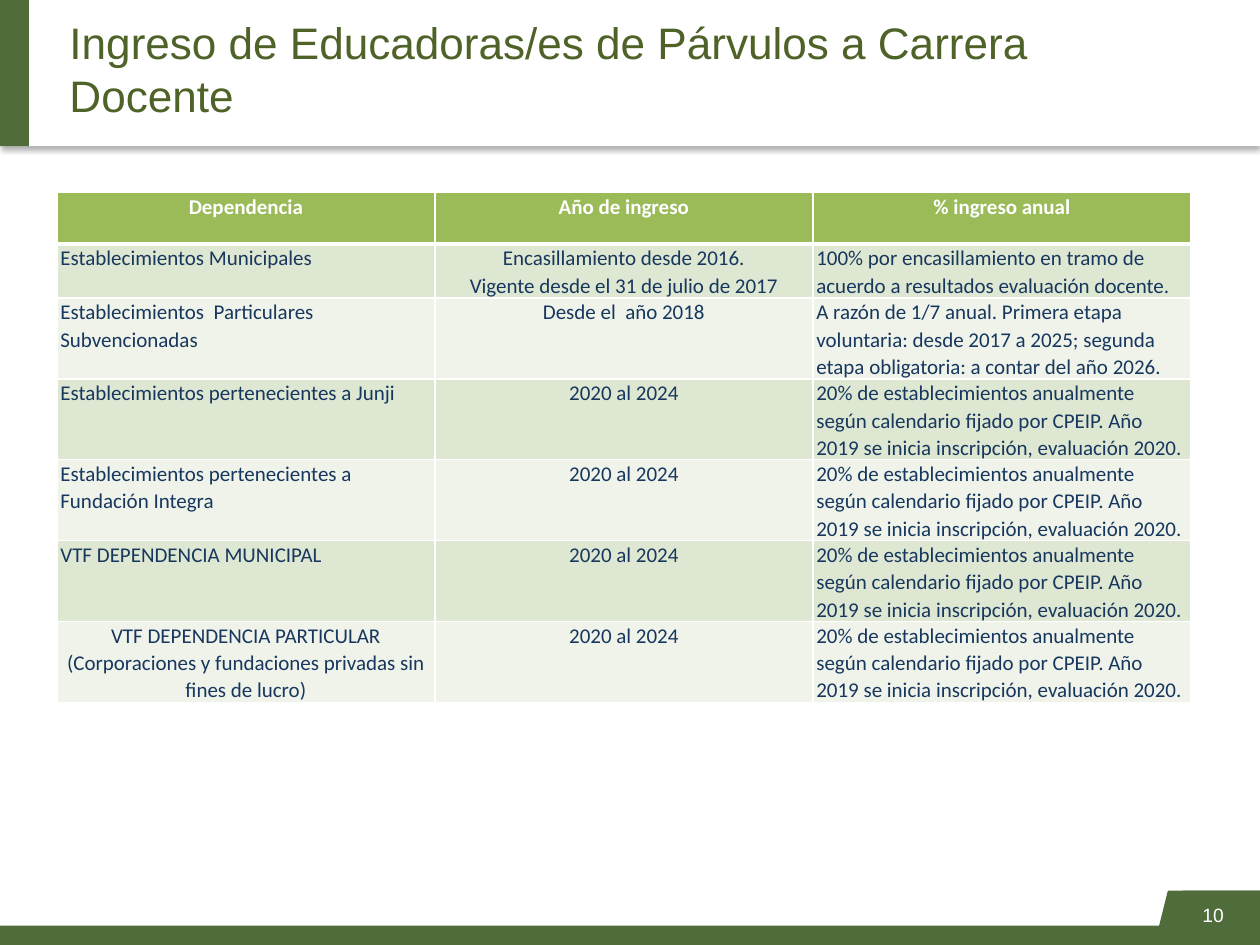
import pptx
import pptx.util
import pptx.dml.color
import pptx.enum.shapes
import pptx.enum.text
import pptx.oxml
import pptx.oxml.ns

Pt = pptx.util.Pt
SHAPE = pptx.enum.shapes.MSO_SHAPE
ALIGN = pptx.enum.text.PP_ALIGN
MIDDLE = pptx.enum.text.MSO_ANCHOR.MIDDLE

# Content
HEADING = "Ingreso de Educadoras/es de Párvulos a Carrera Docente"
PAGE_NUMBER = "10"
COLUMNS = ["Dependencia", "Año de ingreso", "% ingreso anual"]
PERIOD = "2020 al 2024"
CALENDAR = ("20% de establecimientos anualmente según calendario fijado por CPEIP. "
            "Año 2019 se inicia inscripción, evaluación 2020.")
ENTRIES = [
    ("Establecimientos Municipales",
     "Encasillamiento desde 2016.\nVigente desde el 31 de julio de 2017",
     "100% por encasillamiento en tramo de acuerdo a resultados evaluación docente."),
    ("Establecimientos  Particulares Subvencionadas",
     "Desde el  año 2018",
     "A razón de 1/7 anual. Primera etapa voluntaria: desde 2017 a 2025; "
     "segunda etapa obligatoria: a contar del año 2026."),
    ("Establecimientos pertenecientes a Junji", PERIOD, CALENDAR),
    ("Establecimientos pertenecientes a Fundación Integra", PERIOD, CALENDAR),
    ("VTF DEPENDENCIA MUNICIPAL", PERIOD, CALENDAR),
    ("VTF DEPENDENCIA PARTICULAR (Corporaciones y fundaciones privadas sin fines de lucro)",
     PERIOD, CALENDAR),
]

# Format values
GREEN, WHITE = "4F6C3A", "FFFFFF"
BANDS = ["DEE7D1", "EFF3EA"]
HEADING_FONT = {"name": "Arial", "size": Pt(25.2), "bold": False}
NUMBER_FONT = {"name": "Arial", "size": Pt(11)}
HEADER_FONT = {"name": "Calibri", "size": Pt(12), "bold": True}
ENTRY_FONT = {**HEADER_FONT, "bold": False}
CELL_FRAME = {"margin_left": Pt(2), "margin_right": Pt(2), "margin_top": 0, "margin_bottom": 0}

# Bands of the page: preset, left, top, width, height, colour
HEADER_BAND = (SHAPE.RECTANGLE, 0, 0, 720, 83.5, WHITE)
GREEN_BANDS = [
    (SHAPE.RECTANGLE, 0, -3, 16.5, 86.5, GREEN),
    (SHAPE.RECTANGLE, 0, 529, 720, 11.5, GREEN),
    (SHAPE.PARALLELOGRAM, 659.5, 509, 60.5, 31.5, GREEN),
    (SHAPE.RECTANGLE, 676, 509, 44, 31.5, GREEN),
]


def rgb(hex_colour):
    return pptx.dml.color.RGBColor.from_string(hex_colour)


def apply(target, values):
    for attribute, value in values.items():
        setattr(target, attribute, value)


def style_text(paragraph, font_values, colour, align):
    paragraph.alignment = align
    apply(paragraph.font, font_values)
    paragraph.font.color.rgb = rgb(colour)


def add_band(shapes, preset, left, top, width, height, colour):
    band = shapes.add_shape(preset, Pt(left), Pt(top), Pt(width), Pt(height))
    band.shadow.inherit = False
    band.fill.solid()
    band.fill.fore_color.rgb = rgb(colour)
    band.line.fill.background()
    return band


def add_shadow(band):
    effects = band.element.spPr.find(pptx.oxml.ns.qn("a:effectLst"))
    effects.append(pptx.oxml.parse_xml(
        f'<a:outerShdw {pptx.oxml.ns.nsdecls("a")} blurRad="{Pt(3.1)}" dist="{Pt(1.8)}" '
        'dir="5400000" algn="t" rotWithShape="0"><a:srgbClr val="000000">'
        '<a:alpha val="35000"/></a:srgbClr></a:outerShdw>'))


def add_borders(cell, widths):
    properties = cell._tc.get_or_add_tcPr()
    for side in "LRTB":
        properties.append(pptx.oxml.parse_xml(
            f'<a:ln{side} {pptx.oxml.ns.nsdecls("a")} w="{Pt(widths.get(side, 1))}">'
            f'<a:solidFill><a:srgbClr val="{WHITE}"/></a:solidFill></a:ln{side}>'))


def fill_cell(cell, text, fill, font_values, colour, align, widths):
    apply(cell, CELL_FRAME)
    add_borders(cell, widths)
    cell.fill.solid()
    cell.fill.fore_color.rgb = rgb(fill)
    cell.text_frame.text = text
    for paragraph in cell.text_frame.paragraphs:
        paragraph.line_spacing = 1.07
        style_text(paragraph, font_values, colour, align)


def main():
    deck = pptx.Presentation()
    apply(deck, {"slide_width": Pt(720), "slide_height": Pt(540)})
    slide = deck.slides.add_slide(deck.slide_layouts[5])
    shapes = slide.shapes

    # Header and footer bands
    add_shadow(add_band(shapes, *HEADER_BAND))
    for band in GREEN_BANDS:
        add_band(shapes, *band)

    # Title, brought in front of the bands
    title = shapes.title
    title.element.getparent().append(title.element)
    apply(title, {"left": Pt(32.5), "top": Pt(11.5), "width": Pt(598), "height": Pt(55)})
    title.text_frame.text = HEADING
    apply(title.text_frame, {"vertical_anchor": MIDDLE, "word_wrap": True,
                             "auto_size": pptx.enum.text.MSO_AUTO_SIZE.NONE})
    style_text(title.text_frame.paragraphs[0], HEADING_FONT, "4F6228", ALIGN.LEFT)

    # Page number
    number = shapes.add_textbox(Pt(646), Pt(508.5), Pt(60.5), Pt(29)).text_frame
    number.text = PAGE_NUMBER
    apply(number, {"vertical_anchor": MIDDLE, "word_wrap": True})
    style_text(number.paragraphs[0], NUMBER_FONT, WHITE, ALIGN.RIGHT)

    # Table of entry years
    row_height = 29.5
    frame = shapes.add_table(len(ENTRIES) + 1, len(COLUMNS), Pt(32.5), Pt(110),
                             Pt(648), Pt(row_height * (len(ENTRIES) + 1)))
    table = frame.table
    for column, text in enumerate(COLUMNS):
        fill_cell(table.cell(0, column), text, "9BBB59", HEADER_FONT, WHITE,
                  ALIGN.CENTER, {"B": 3})
    for row, entry in enumerate(ENTRIES, start=1):
        for column, text in enumerate(entry):
            centred = column == 1 or (column == 0 and row == len(ENTRIES))
            fill_cell(table.cell(row, column), text, BANDS[(row - 1) % 2], ENTRY_FONT,
                      "17375E", ALIGN.CENTER if centred else ALIGN.LEFT,
                      {"T": 3} if row == 1 else {})

    deck.save("out.pptx")


if __name__ == "__main__":
    main()
